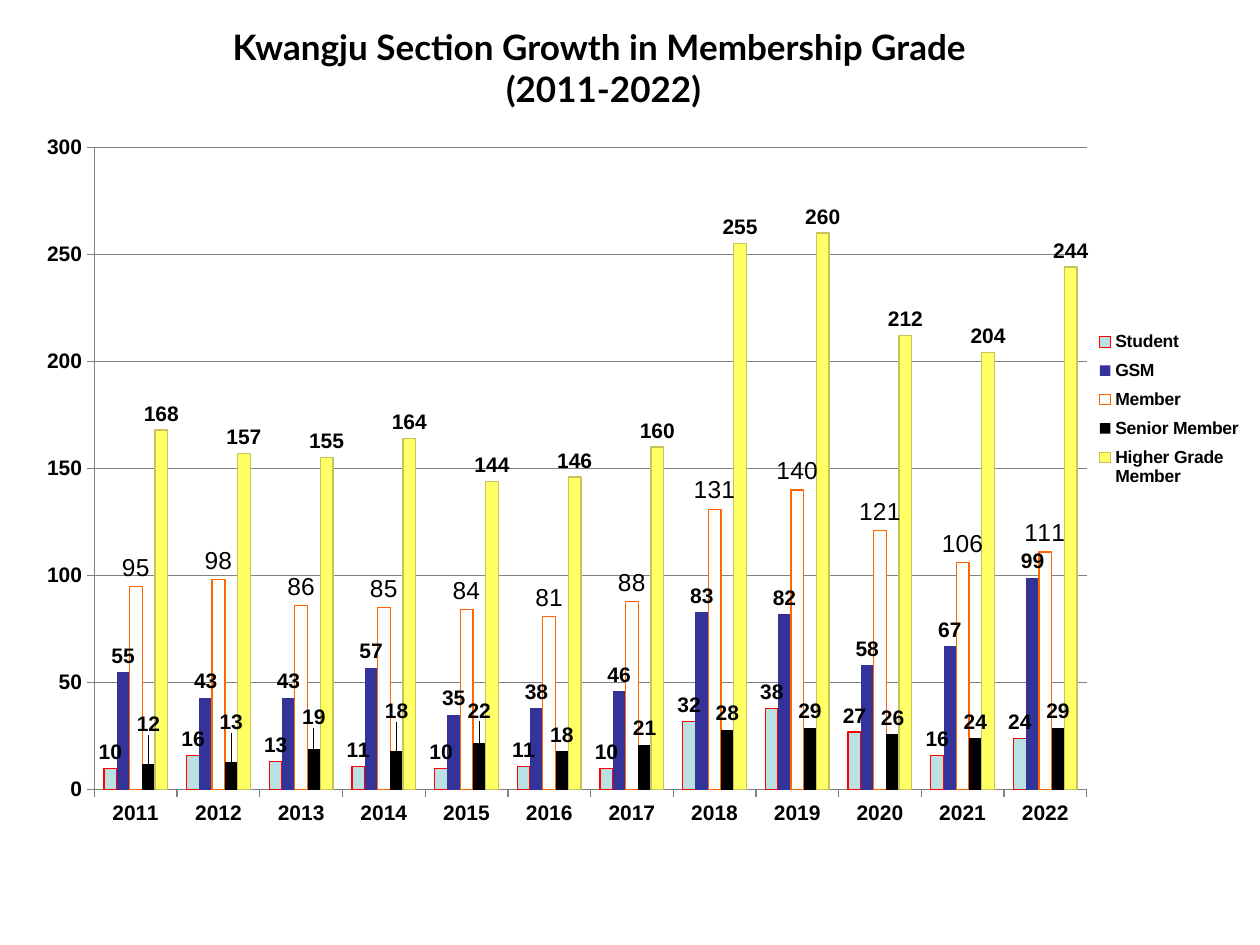
from lxml import etree
from pptx import Presentation
from pptx.chart.data import CategoryChartData
from pptx.dml.color import RGBColor
from pptx.enum.chart import XL_CHART_TYPE as ChartType
from pptx.enum.chart import XL_LABEL_POSITION as LabelPosition
from pptx.enum.chart import XL_LEGEND_POSITION as LegendPosition
from pptx.enum.chart import XL_TICK_MARK as TickMark
from pptx.enum.text import MSO_ANCHOR as Anchor
from pptx.enum.text import PP_ALIGN as Align
from pptx.oxml.ns import qn
from pptx.util import Pt

BLACK = RGBColor(0x00, 0x00, 0x00)
GRAY = RGBColor(0x80, 0x80, 0x80)
WHITE = RGBColor(0xFF, 0xFF, 0xFF)
RED = RGBColor(0xFF, 0x00, 0x00)
ORANGE = RGBColor(0xFF, 0x66, 0x00)
PALE_BLUE = RGBColor(0xBB, 0xE0, 0xE3)
NAVY = RGBColor(0x33, 0x33, 0x99)
YELLOW = RGBColor(0xFF, 0xFF, 0x66)
OLIVE = RGBColor(0xC8, 0xC3, 0x58)

YEARS = [str(year) for year in range(2011, 2023)]
GRADES = [
    ("Student", [10, 16, 13, 11, 10, 11, 10, 32, 38, 27, 16, 24], PALE_BLUE, RED, 12),
    ("GSM", [55, 43, 43, 57, 35, 38, 46, 83, 82, 58, 67, 99], NAVY, None, 12),
    ("Member", [95, 98, 86, 85, 84, 81, 88, 131, 140, 121, 106, 111], WHITE, ORANGE, 14),
    ("Senior Member", [12, 13, 19, 18, 22, 18, 21, 28, 29, 26, 24, 29], BLACK, None, 12),
    ("Higher Grade Member", [168, 157, 155, 164, 144, 146, 160, 255, 260, 212, 204, 244],
     YELLOW, OLIVE, 12),
]
SENIOR_LABEL_SHIFTS = [-0.03, -0.03, -0.02, -0.03, -0.02]


def make_layout(**settings):
    layout = etree.Element(qn("c:layout"))
    manual = etree.SubElement(layout, qn("c:manualLayout"))
    for tag, value in settings.items():
        etree.SubElement(manual, qn(f"c:{tag}")).set("val", str(value))
    return layout


def set_font(font, size, bold=True):
    font.size = Pt(size)
    font.bold = bold
    font.color.rgb = BLACK


def set_line(line, color, width=0.75):
    line.color.rgb = color
    line.width = Pt(width)


def add_title(slide, lines):
    frame = slide.shapes.add_textbox(Pt(36), Pt(12.24), Pt(617.76), Pt(52.56)).text_frame
    frame.word_wrap = True
    frame.vertical_anchor = Anchor.MIDDLE
    paragraph = frame.paragraphs[0]
    paragraph.alignment = Align.CENTER
    for index, line in enumerate(lines):
        if index:
            paragraph.add_line_break()
        run = paragraph.add_run()
        run.text = line
        run.font.name = "Lato"
        set_font(run.font, 20)


def style_axis(axis):
    axis.major_tick_mark = TickMark.OUTSIDE
    axis.minor_tick_mark = TickMark.NONE
    set_font(axis.tick_labels.font, 12)
    set_line(axis.format.line, GRAY)


def style_grade(series, fill, outline, label_size):
    series.format.fill.solid()
    series.format.fill.fore_color.rgb = fill
    series.invert_if_negative = False
    if outline is None:
        series.format.line.fill.background()
    else:
        set_line(series.format.line, outline)
    labels = series.data_labels
    labels.show_value = True
    labels.position = LabelPosition.OUTSIDE_END
    set_font(labels.font, label_size, bold=label_size == 12)


def raise_labels(series, shifts):
    for index, shift in enumerate(shifts):
        label = series.points[index].data_label
        set_font(label.font, 12)
        label.position = LabelPosition.OUTSIDE_END
    for label, shift in zip(series.data_labels._element.findall(qn("c:dLbl")), shifts):
        label.find(qn("c:idx")).addnext(make_layout(x=0, y=shift))


def place_plot(chart, **settings):
    area = chart._chartSpace.chart.plotArea
    for old in area.findall(qn("c:layout")):
        area.remove(old)
    area.insert(0, make_layout(layoutTarget="inner", xMode="edge", yMode="edge", **settings))


def add_legend(chart, **settings):
    chart.has_legend = True
    legend = chart.legend
    legend.position = LegendPosition.RIGHT
    legend.include_in_layout = False
    set_font(legend.font, 10)
    for old in legend._element.findall(qn("c:layout")):
        legend._element.remove(old)
    legend._element.find(qn("c:legendPos")).addnext(
        make_layout(xMode="edge", yMode="edge", **settings))


def add_growth_chart(slide):
    data = CategoryChartData(number_format="General")
    data.categories = YEARS
    for name, members, *_ in GRADES:
        data.add_series(name, members)
    chart = slide.shapes.add_chart(
        ChartType.COLUMN_CLUSTERED, Pt(-18), Pt(72), Pt(750), Pt(450), data).chart
    chart.has_title = False
    chart.font.name = "Arial"
    set_font(chart.font, 17.9, bold=False)

    plot = chart.plots[0]
    plot.gap_width = 150
    plot.overlap = 0
    plot.vary_by_categories = False
    for series, (_, _, fill, outline, label_size) in zip(plot.series, GRADES):
        style_grade(series, fill, outline, label_size)
    raise_labels(plot.series[3], SENIOR_LABEL_SHIFTS)

    count_axis = chart.value_axis
    for axis in (chart.category_axis, count_axis):
        style_axis(axis)
    count_axis.minimum_scale = 0
    count_axis.maximum_scale = 300
    count_axis.major_unit = 50
    count_axis.has_major_gridlines = True
    set_line(count_axis.major_gridlines.format.line, GRAY)
    count_axis.tick_labels.number_format = "#,##0"
    count_axis.tick_labels.number_format_is_linked = False

    place_plot(chart, x=0.096, y=0.027, w=0.756, h=0.816)
    add_legend(chart, x=0.855, y=0.25, w=0.12, h=0.22)


def main():
    deck = Presentation()
    deck.slide_width = Pt(720)
    deck.slide_height = Pt(540)
    slide = deck.slides.add_slide(deck.slide_layouts[6])
    add_title(slide, ["Kwangju Section Growth in Membership Grade ", "(2011-2022)"])
    add_growth_chart(slide)
    deck.save("out.pptx")


if __name__ == "__main__":
    main()
